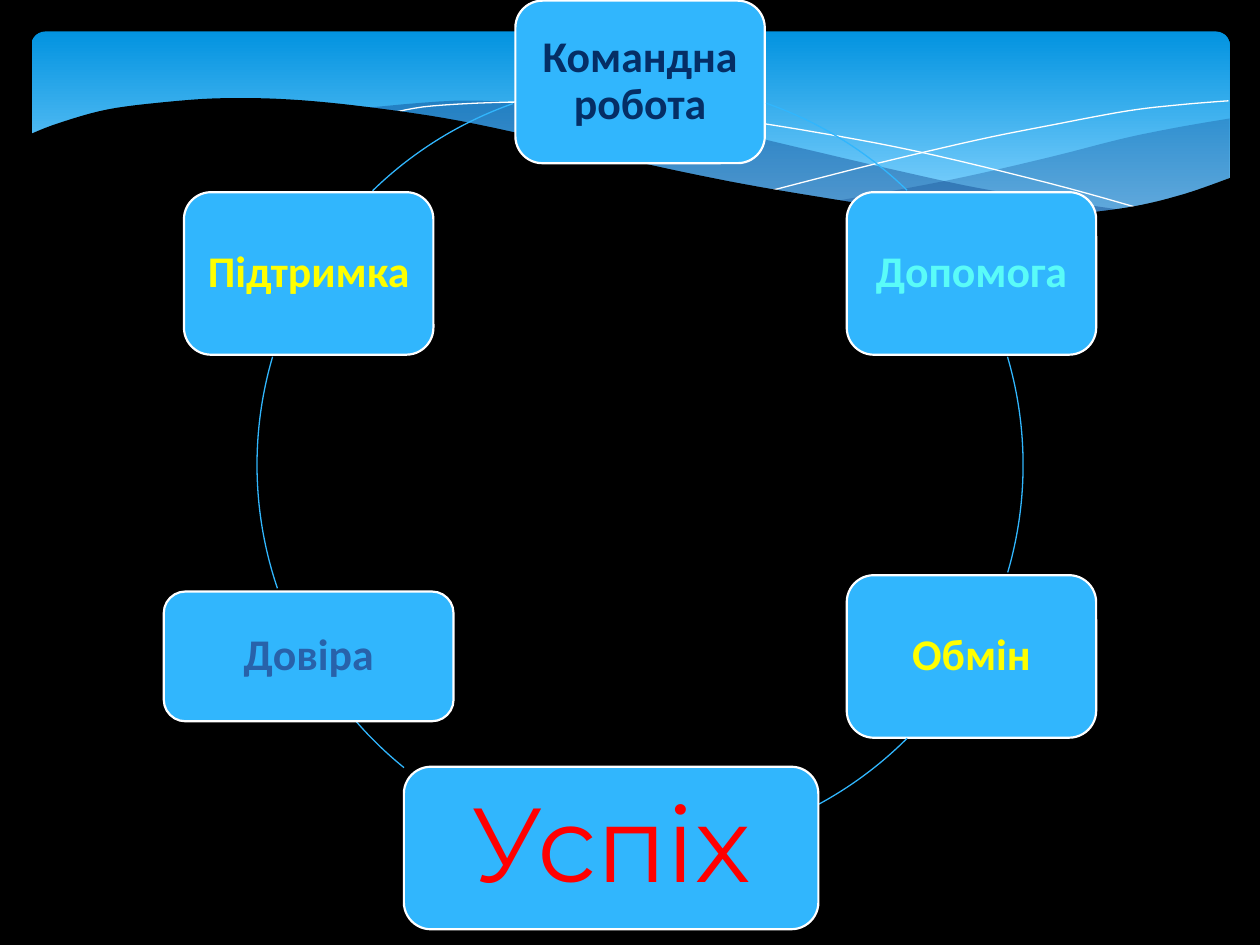
from dataclasses import dataclass
from itertools import chain
from typing import NamedTuple, Optional

from lxml.etree import SubElement
from pptx import Presentation as Deck
from pptx.dml.color import RGBColor as Color
from pptx.enum.shapes import MSO_SHAPE as Preset
from pptx.enum.text import MSO_ANCHOR as Anchor, PP_ALIGN as Align
from pptx.oxml.ns import qn
from pptx.shapes.autoshape import Shape
from pptx.slide import Slide
from pptx.util import Inches, Pt

Point = tuple[float, float]
Edge = list[Point]


@dataclass(frozen=True)
class Theme:
    ground: str = "000000"
    sky_top: str = "0293E0"
    sky_bottom: str = "83D3FE"
    wave: str = "073E87"
    node: str = "31B6FD"
    outline: str = "FFFFFF"
    navy: str = "052E65"
    aqua: str = "5AFBF8"
    yellow: str = "FFFF00"
    blue: str = "2862AA"
    red: str = "FF0000"
    label_font: str = "Calibri"
    goal_font: str = "Montserrat"
    label_size: int = 25
    goal_size: int = 60
    node_line: float = 1.25
    arc_line: float = 0.75


THEME = Theme()


class Wave(NamedTuple):
    edges: list[Edge]
    fill: Optional[str] = None
    opacity: int = 100


class Node(NamedTuple):
    text: str
    center: Point
    color: str
    size: Point = (1.98, 1.29)
    font: str = THEME.label_font
    points: int = THEME.label_size
    bold: bool = True
    inset: float = 0.1


class Arc(NamedTuple):
    start: float
    end: float
    corner: Point = (2.04, 0.65)


WAVES = [
    Wave([
        [(9.76, 0.94), (9.35, 1.01), (8.91, 1.1), (8.32, 1.25), (7.53, 1.43), (6.61, 1.6)],
        [(6.61, 1.6), (7.05, 1.65), (7.57, 1.7), (8.14, 1.72), (8.63, 1.7),
         (9.05, 1.63), (9.42, 1.54), (9.76, 1.41)],
    ], THEME.wave, 29),
    Wave([
        [(8.93, 1.67), (8.37, 1.59), (7.75, 1.49), (7.06, 1.34), (6.29, 1.16), (5.69, 1.02),
         (5.14, 0.92), (4.65, 0.86), (4.2, 0.82), (3.61, 0.8), (2.86, 0.86)],
        [(2.86, 0.86), (3.42, 0.94), (4.04, 1.06), (4.91, 1.26), (5.66, 1.43), (6.34, 1.56),
         (6.95, 1.65), (7.61, 1.71), (8.18, 1.73), (8.57, 1.71), (8.93, 1.67)],
    ], THEME.wave, 40),
    Wave([
        [(3.09, 0.9), (3.44, 0.84), (4.16, 0.81), (4.89, 0.84), (5.56, 0.91), (6.36, 1.03),
         (7.27, 1.2), (8.31, 1.45), (9.07, 1.66)],
    ]),
    Wave([
        [(6.13, 1.51), (6.95, 1.3), (7.76, 1.11), (8.36, 0.99), (8.95, 0.88),
         (9.38, 0.83), (9.75, 0.8)],
    ]),
    Wave([
        [(9.77, 1.41), (9.4, 1.54), (8.99, 1.64), (8.5, 1.7), (8.09, 1.71), (7.61, 1.7),
         (7.08, 1.65), (6.48, 1.56), (5.79, 1.44), (5.03, 1.28), (4.47, 1.14), (3.65, 0.96),
         (2.92, 0.85), (2.3, 0.79), (1.77, 0.78), (1.32, 0.81), (0.85, 0.87), (0.46, 0.98),
         (0.23, 1.07)],
        [(0.23, 2.24), (9.77, 2.24)],
    ], THEME.ground),
]

NODES = [
    Node("Командна робота", (5.08, 0.65), THEME.navy),
    Node("Допомога", (7.71, 2.17), THEME.aqua),
    Node("Обмін", (7.71, 5.21), THEME.yellow),
    Node("Успіх", (4.85, 6.73), THEME.red, (3.29, 1.29), THEME.goal_font,
         THEME.goal_size, False, 0.25),
    Node("Довіра", (2.45, 5.21), THEME.blue, (2.3, 1.03)),
    Node("Підтримка", (2.45, 2.17), THEME.yellow),
]

ARCS = [
    Arc(289.2, 314.2),
    Arc(343.6, 16.3),
    Arc(45, 61.5, (2.01, 0.67)),
    Arc(129, 139.1, (2.08, 0.69)),
    Arc(161.2, 196.4),
    Arc(225.7, 250.6),
]
RING = 6.08


def smooth(knots: Edge, steps: int = 6) -> Edge:
    if len(knots) < 3:
        return knots
    padded = [knots[0], *knots, knots[-1]]
    curve = [knots[0]]
    for a, b, c, d in zip(padded, padded[1:], padded[2:], padded[3:]):
        for t in (step / steps for step in range(1, steps + 1)):
            x, y = (
                (2 * q + (r - p) * t + (2 * p - 5 * q + 4 * r - s) * t**2
                 + (3 * q - p - 3 * r + s) * t**3) / 2
                for p, q, r, s in zip(a, b, c, d)
            )
            curve.append((x, y))
    return curve


def paint(shape: Shape, fill: Optional[str], line: Optional[str], width: float = 0) -> None:
    shape.shadow.inherit = False
    if fill:
        shape.fill.solid()
        shape.fill.fore_color.rgb = Color.from_string(fill)
    else:
        shape.fill.background()
    if line:
        shape.line.color.rgb = Color.from_string(line)
        shape.line.width = Pt(width)
    else:
        shape.line.fill.background()


def draw_sky(page: Slide) -> None:
    sky = page.shapes.add_shape(
        Preset.ROUNDED_RECTANGLE, Inches(0.25), Inches(0.25), Inches(9.51), Inches(1.56))
    sky.adjustments[0] = 0.07
    paint(sky, None, None)
    sky.fill.gradient()
    sky.fill.gradient_angle = 270
    for stop, color, position in zip(
            sky.fill.gradient_stops, (THEME.sky_top, THEME.sky_bottom), (0, 0.9)):
        stop.color.rgb = Color.from_string(color)
        stop.position = position


def draw_wave(page: Slide, wave: Wave) -> None:
    outline = chain.from_iterable(smooth(edge) for edge in wave.edges)
    first, *rest = [(Inches(x), Inches(y)) for x, y in outline]
    builder = page.shapes.build_freeform(*first)
    builder.add_line_segments(rest, close=wave.fill is not None)
    shape = builder.convert_to_shape()
    paint(shape, wave.fill, None if wave.fill else THEME.outline)
    if wave.opacity < 100:
        tint = shape.fill._xPr.find(qn("a:solidFill"))[0]
        SubElement(tint, qn("a:alpha"), val=str(wave.opacity * 1000))


def draw_arc(page: Slide, arc: Arc) -> None:
    left, top = arc.corner
    shape = page.shapes.add_shape(
        Preset.ARC, Inches(left), Inches(top), Inches(RING), Inches(RING))
    for index, degrees in enumerate((arc.start, arc.end)):
        shape.adjustments[index] = degrees * 0.6
    paint(shape, None, THEME.node, THEME.arc_line)


def draw_node(page: Slide, node: Node) -> None:
    (x, y), (width, height) = node.center, node.size
    box = page.shapes.add_shape(
        Preset.ROUNDED_RECTANGLE, Inches(x - width / 2), Inches(y - height / 2),
        Inches(width), Inches(height))
    paint(box, THEME.node, THEME.outline, THEME.node_line)
    frame = box.text_frame
    frame.word_wrap = True
    frame.vertical_anchor = Anchor.MIDDLE
    frame.margin_left = frame.margin_right = Inches(node.inset)
    frame.margin_top = frame.margin_bottom = Inches(node.inset)
    para = frame.paragraphs[0]
    para.alignment = Align.CENTER
    para.line_spacing = 0.9
    span = para.add_run()
    span.text = node.text
    span.font.name = node.font
    span.font.size = Pt(node.points)
    span.font.bold = node.bold
    span.font.color.rgb = Color.from_string(node.color)


def main() -> None:
    deck = Deck()
    deck.slide_width, deck.slide_height = Inches(10), Inches(7.5)
    page = deck.slides.add_slide(deck.slide_layouts[6])
    page.background.fill.solid()
    page.background.fill.fore_color.rgb = Color.from_string(THEME.ground)
    draw_sky(page)
    for wave in WAVES:
        draw_wave(page, wave)
    for node, arc in zip(NODES, ARCS):
        draw_node(page, node)
        draw_arc(page, arc)
    deck.save("out.pptx")


if __name__ == "__main__":
    main()
